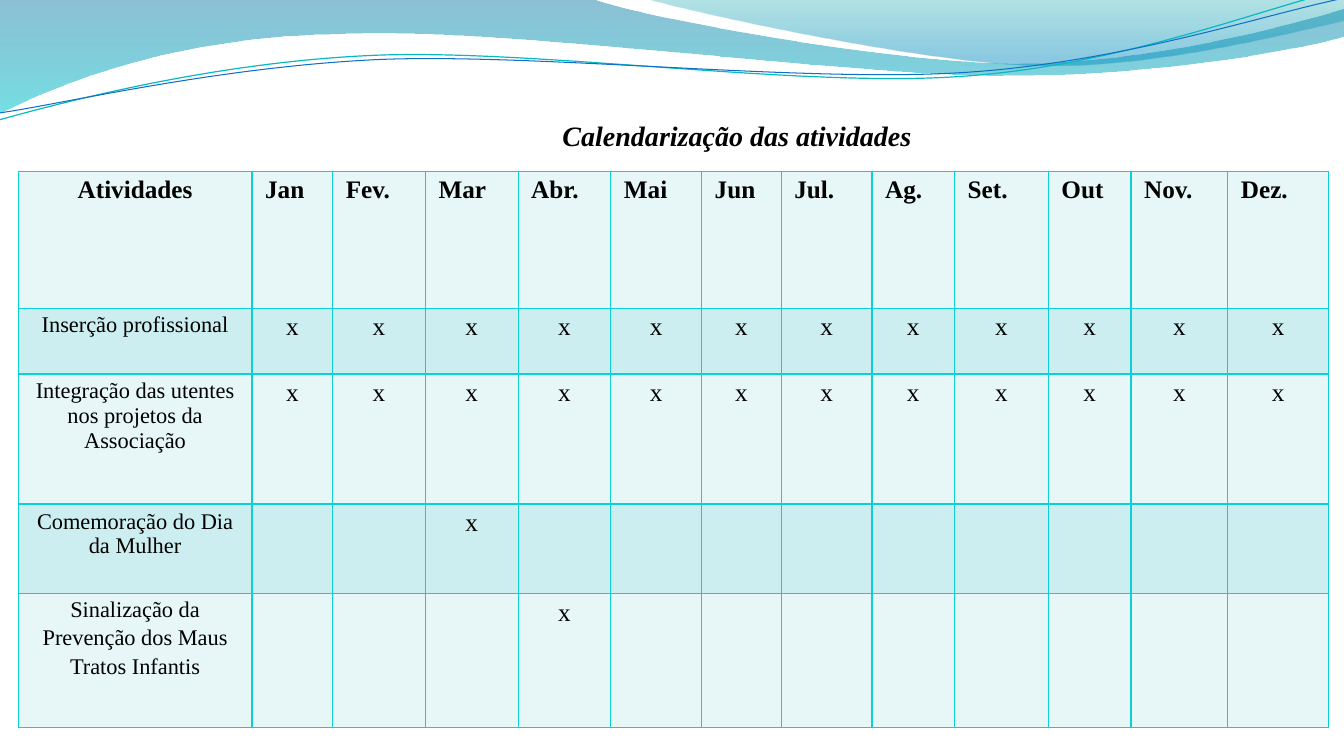
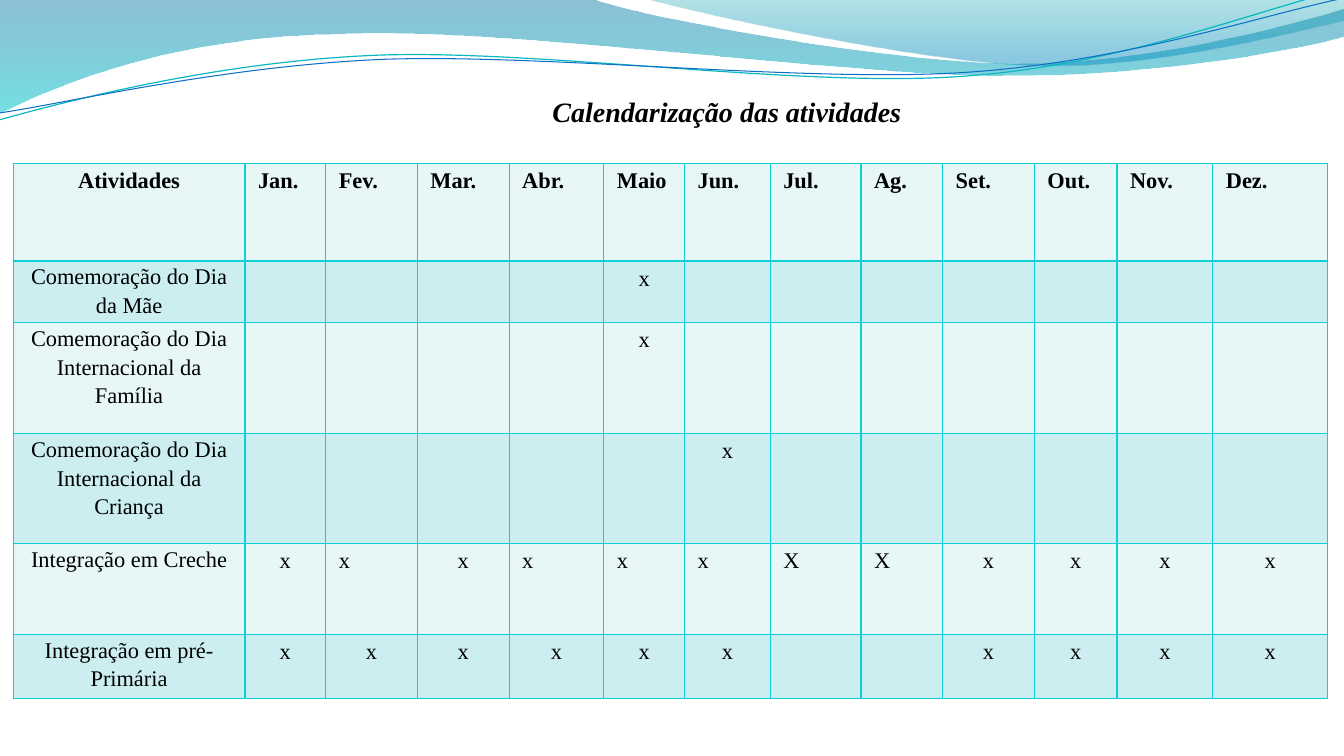
import math
from dataclasses import dataclass

from pptx import Presentation
from pptx.dml.color import RGBColor
from pptx.enum.text import MSO_AUTO_SIZE, PP_ALIGN
from pptx.oxml import parse_xml
from pptx.oxml.ns import nsdecls, qn
from pptx.oxml.xmlchemy import OxmlElement
from pptx.util import Inches, Pt

LEFT, CENTER = PP_ALIGN.LEFT, PP_ALIGN.CENTER
GROW = MSO_AUTO_SIZE.SHAPE_TO_FIT_TEXT


@dataclass(frozen=True)
class Theme:
    font: str = "Times New Roman"
    ink: str = "000000"
    border: str = "0BD0D9"
    bands: tuple = ("E7F7F8", "CCEEF1")
    title_size: int = 20
    label_size: int = 16
    border_width: int = 1
    side_margin: float = 0.13
    edge_margin: float = 0.05


THEME = Theme()
TITLE = "Calendarização das atividades"
ALL_YEAR = "x" * 12

CALENDARS = [
    {
        "title_at": (3.27, 1.08, 8.08, 0.49),
        "table_at": (0.18, 1.7),
        "size": 18,
        "columns": [2.32, 0.8, 0.92, 0.92, 0.92, 0.9, 0.79, 0.9, 0.82, 0.93, 0.82, 0.96, 1],
        "heights": [1.36, 0.65, 1.29, 0.89, 1.33],
        "header": ["Atividades", "Jan", "Fev.", "Mar", "Abr.", "Mai", "Jun",
                   "Jul.", "Ag.", "Set.", "Out", "Nov.", "Dez."],
        "activities": [
            {"label": "Inserção profissional", "marks": ALL_YEAR},
            {"label": "Integração das utentes nos projetos da Associação",
             "marks": ALL_YEAR, "compact": True},
            {"label": "Comemoração do Dia da Mulher", "marks": "--x---------", "compact": True},
            {"label": "Sinalização da Prevenção dos Maus Tratos Infantis",
             "marks": "---x--------"},
        ],
    },
    {
        "title_at": (3.59, 0.84, 7.24, 0.49),
        "table_at": (0.13, 1.62),
        "size": 16,
        "columns": [2.3, 0.8, 0.91, 0.91, 0.94, 0.8, 0.85, 0.9, 0.81, 0.91, 0.82, 0.95, 1.14],
        "heights": [0.97, 0.61, 1.1, 1.09, 0.9, 0.64],
        "header": ["Atividades", "Jan.", "Fev.", "Mar.", "Abr.", "Maio", "Jun.",
                   "Jul.", "Ag.", "Set.", "Out.", "Nov.", "Dez."],
        "activities": [
            {"label": "Comemoração do Dia da Mãe", "marks": "----x-------"},
            {"label": "Comemoração do Dia Internacional da Família", "marks": "----x-------"},
            {"label": "Comemoração do Dia Internacional da Criança", "marks": "-----x------"},
            {"label": "Integração em Creche", "marks": "xxxxxxXXxxxx",
             "left_months": (1, 3, 4, 5, 6, 7)},
            {"label": "Integração em pré-Primária", "marks": "xxxxxx--xxxx"},
        ],
    },
]

WAVES = [
    {
        "start": (0, 0),
        "path": [(5.87, -0.01), (6.34, 0.17, 8.85, 0.63, 10.11, 0.63),
                 (11.38, 0.63, 12.78, 0.26, 13.33, 0.09), (13.35, 0.36),
                 (13.11, 0.44, 11.6, 0.76, 9.94, 0.75), (8.29, 0.75, 5.09, 0.28, 3.43, 0.34),
                 (1.72, 0.36, 0.61, 0.83, -0.01, 1.13), (0, 0)],
        "stops": [(0, "0074A1", 45), (1, "00C6CF", 55)],
    },
    {
        "start": (6.39, -0.01),
        "path": [(6.79, 0.11, 9.09, 0.62, 10.25, 0.65),
                 (11.41, 0.69, 12.82, 0.32, 13.33, 0.21), (13.33, 0), (6.39, -0.01)],
        "stops": [(0, "00A1A9", 30), (0.8, "008BBF", 45)],
    },
    {
        "start": (-0.01, 1.19),
        "path": [(0.64, 1.01, 2.11, 0.62, 3.69, 0.55), (5.27, 0.48, 7.9, 0.87, 9.5, 0.76),
                 (11.1, 0.66, 12.52, 0.08, 13.31, -0.1)],
        "line": ("0AB8BF", 0.85),
        "center": (6.65, 0.58),
        "rotation": 357.3,
    },
    {
        "start": (0, 1.12),
        "path": [(0.63, 1.03, 2.18, 0.66, 3.78, 0.59), (5.37, 0.53, 7.96, 0.82, 9.55, 0.72),
                 (11.15, 0.62, 12.55, 0.14, 13.34, -0.02)],
        "line": ("0F6FC6", 0.75),
        "center": (6.67, 0.59),
        "rotation": 357.3,
    },
]


def color(value):
    return RGBColor.from_string(value)


def wave_points(wave):
    points = [wave["start"]]
    for segment in wave["path"]:
        points += zip(segment[::2], segment[1::2])
    center_x, center_y = wave.get("center", (0, 0))
    angle = -math.radians(wave.get("rotation", 0))
    cosine, sine = math.cos(angle), math.sin(angle)
    return [(Inches(center_x + (x - center_x) * cosine - (y - center_y) * sine),
             Inches(center_y + (x - center_x) * sine + (y - center_y) * cosine))
            for x, y in points]


def bend(shape, path):
    lines = iter(list(shape.element.iter(qn("a:lnTo"))))
    for segment in path:
        first = next(lines)
        if len(segment) == 2:
            continue
        curve = OxmlElement("a:cubicBezTo")
        first.addprevious(curve)
        for line in (first, next(lines), next(lines)):
            curve.append(line[0])
            line.getparent().remove(line)


def draw_wave(slide, wave):
    filled = "stops" in wave
    points = wave_points(wave)
    builder = slide.shapes.build_freeform(*points[0])
    builder.add_line_segments(points[1:], close=filled)
    shape = builder.convert_to_shape()
    bend(shape, wave["path"])
    shape.rotation = wave.get("rotation", 0)
    shape.shadow.inherit = False
    if not filled:
        line_color, width = wave["line"]
        shape.fill.background()
        shape.line.color.rgb = color(line_color)
        shape.line.width = Pt(width)
        return shape
    shape.line.fill.background()
    shape.fill.gradient()
    shape.fill.gradient_angle = 270
    for stop, (position, stop_color, _) in zip(shape.fill.gradient_stops, wave["stops"]):
        stop.position = position
        stop.color.rgb = color(stop_color)
    gradient = shape.element.spPr.find(qn("a:gradFill"))
    for element, (_, _, opacity) in zip(gradient.iter(qn("a:srgbClr")), wave["stops"]):
        alpha = OxmlElement("a:alpha")
        alpha.set("val", str(opacity * 1000))
        element.append(alpha)
    return shape


def decorate_layout(layout, slide):
    for placeholder in list(layout.placeholders):
        layout.shapes.element.remove(placeholder.element)
    for wave in WAVES:
        layout.shapes.element.append(draw_wave(slide, wave).element)


def write(frame, text, size, align=CENTER, spaced=False, **style):
    para = frame.paragraphs[0]
    para.alignment = align
    if spaced:
        para.line_spacing = 1.15
        para.space_after = Pt(10)
    span = para.add_run()
    span.text = text
    span.font.color.rgb = color(THEME.ink)
    formats = {"name": THEME.font, "size": Pt(size), "bold": False, **style}
    for name, value in formats.items():
        setattr(span.font, name, value)


def style_cell(cell, fill, edge_margin):
    cell.fill.solid()
    cell.fill.fore_color.rgb = color(fill)
    margins = {"left": THEME.side_margin, "right": THEME.side_margin,
               "top": edge_margin, "bottom": edge_margin}
    for side, margin in margins.items():
        setattr(cell, f"margin_{side}", Inches(margin))
    properties = cell._tc.get_or_add_tcPr()
    for index, side in enumerate("LRTB"):
        properties.insert(index, parse_xml(
            f'<a:ln{side} {nsdecls("a")} w="{Pt(THEME.border_width)}"><a:solidFill>'
            f'<a:srgbClr val="{THEME.border}"/></a:solidFill></a:ln{side}>'))


def add_title(slide, place):
    box = slide.shapes.add_textbox(*map(Inches, place))
    box.text_frame.word_wrap = True
    box.text_frame.auto_size = GROW
    write(box.text_frame, TITLE, THEME.title_size, spaced=True, bold=True, italic=True)


def add_calendar(slide, calendar):
    columns, heights, size = calendar["columns"], calendar["heights"], calendar["size"]
    extent = (*calendar["table_at"], sum(columns), sum(heights))
    table = slide.shapes.add_table(len(heights), len(columns), *map(Inches, extent)).table
    table.first_row = table.horz_banding = False
    for column, width in zip(table.columns, columns):
        column.width = Inches(width)
    for row, height in zip(table.rows, heights):
        row.height = Inches(height)

    for index, text in enumerate(calendar["header"]):
        cell = table.cell(0, index)
        style_cell(cell, THEME.bands[0], THEME.edge_margin)
        write(cell.text_frame, text, size, LEFT if index else CENTER, bold=True)

    for row, activity in enumerate(calendar["activities"], 1):
        fill = THEME.bands[row % 2]
        spaced = not activity.get("compact", False)
        label = table.cell(row, 0)
        style_cell(label, fill, 0 if spaced else THEME.edge_margin)
        write(label.text_frame, activity["label"], THEME.label_size, spaced=spaced)
        for month, mark in enumerate(activity["marks"]):
            cell = table.cell(row, month + 1)
            style_cell(cell, fill, THEME.edge_margin)
            if mark != "-":
                align = LEFT if month in activity.get("left_months", ()) else CENTER
                write(cell.text_frame, mark, size, align)


def main():
    deck = Presentation()
    deck.slide_width, deck.slide_height = Inches(13.33), Inches(7.5)
    layout = deck.slide_layouts[6]
    slides = [deck.slides.add_slide(layout) for _ in CALENDARS]
    decorate_layout(layout, slides[0])
    for slide, calendar in zip(slides, CALENDARS):
        add_title(slide, calendar["title_at"])
        add_calendar(slide, calendar)
    deck.save("out.pptx")


if __name__ == "__main__":
    main()
